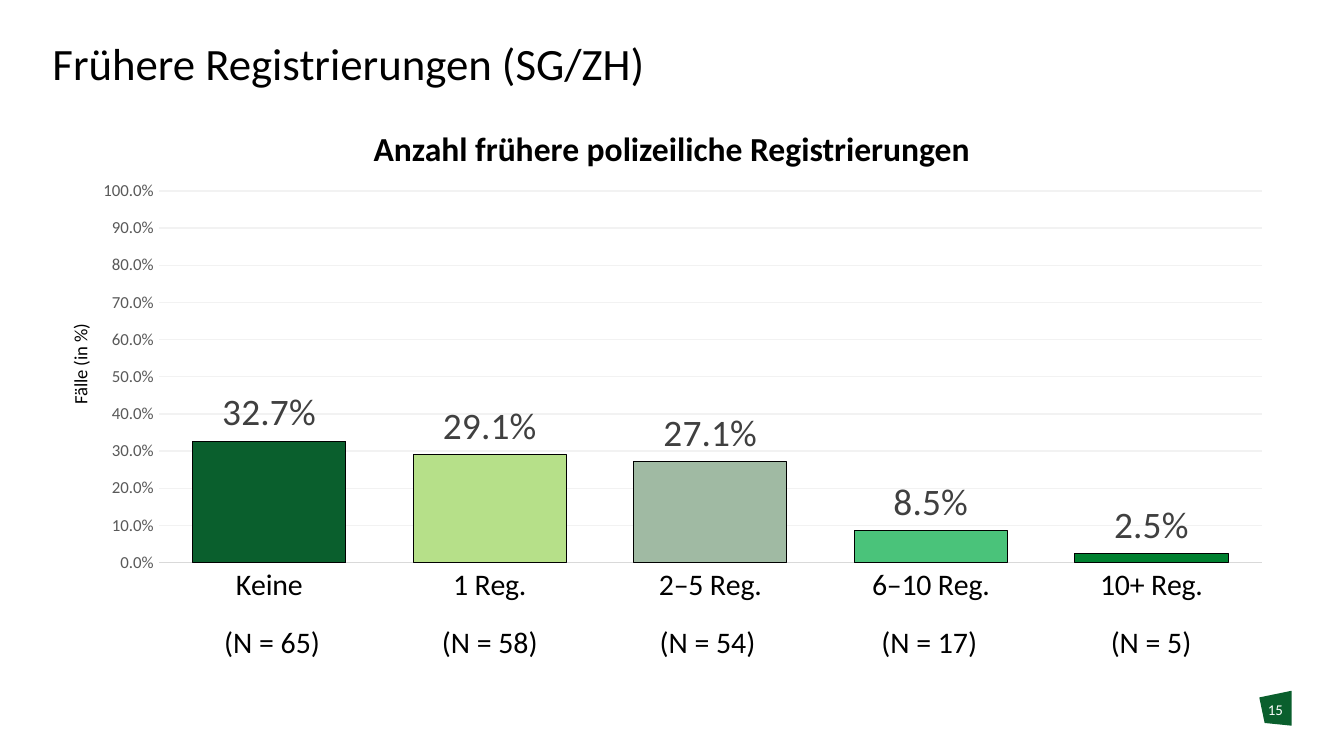
from pptx import Presentation, util as u
from pptx.chart.data import CategoryChartData
from pptx.dml.color import RGBColor
from pptx.enum import chart as ch, shapes, text
from pptx.oxml import parse_xml
from pptx.oxml.ns import nsdecls, qn

PX = 9144  # 100 px to the inch
HUES = {
    "ink": "000000", "paper": "FFFFFF", "grid": "F2F2F2", "axis": "D9D9D9",
    "tick": "595959", "label": "404040", "pine": "0A5F2D", "lime": "B6E089",
    "sage": "A0BAA3", "mint": "4AC37A", "leaf": "00802F",
}
GROUPS = [  # name, share, bar colour, count, left of the count
    ("Keine", 0.327, "pine", 65, 126),
    ("1 Reg.", 0.291, "lime", 58, 288),
    ("2–5 Reg.", 0.271, "sage", 54, 450),
    ("6–10 Reg.", 0.085, "mint", 17, 615),
    ("10+ Reg.", 0.025, "leaf", 5, 780),
]


def rgb(hue):
    return RGBColor.from_string(HUES[hue])


def emu(*box):
    return [u.Emu(round(n * PX)) for n in box]


def style(font, size, hue="ink", bold=False):
    form = {"name": "Calibri", "size": u.Pt(size), "bold": bold}
    for key, val in form.items():
        setattr(font, key, val)
    font.color.rgb = rgb(hue)


def paint(form, hue):
    form.fill.solid()
    form.fill.fore_color.rgb = rgb(hue)


def rule(line, hue, width):
    line.color.rgb = rgb(hue)
    line.width = u.Pt(width)


def write(frame, words, size, hue="ink", bold=False, side="CENTER", anchor="TOP", inset=0):
    form = {"word_wrap": True, "vertical_anchor": text.MSO_ANCHOR[anchor]}
    for edge in ("left", "right", "top", "bottom"):
        form[f"margin_{edge}"] = u.Emu(inset * PX)
    for key, val in form.items():
        setattr(frame, key, val)
    par = frame.paragraphs[0]
    par.alignment = text.PP_ALIGN[side]
    run = par.add_run()
    run.text = words
    style(run.font, size, hue, bold)
    return par


def place(node, index, inner=False, **spots):
    """Give a chart part a manual layout, in shares of the chart's size."""
    for old in node.findall(qn("c:layout")):
        node.remove(old)
    target = '<c:layoutTarget val="inner"/>' if inner else ""
    modes = "".join(f'<c:{k}Mode val="edge"/>' for k in "xy")
    sizes = "".join(f'<c:{k} val="{v}"/>' for k, v in spots.items())
    node.insert(index, parse_xml(
        f'<c:layout {nsdecls("c")}><c:manualLayout>{target}{modes}{sizes}'
        "</c:manualLayout></c:layout>"))


def add_title(slide, x, y, w, h):
    frame = slide.shapes.add_textbox(*emu(x, y, w, h)).text_frame
    par = write(frame, "Frühere Registrierungen (SG/ZH)", 24, side="LEFT", anchor="BOTTOM")
    par.line_spacing = 0.9


def add_badge(slide, x, y, w, h):
    """Page number on a slanted tile."""
    pen = slide.shapes.build_freeform(x, y + 5, scale=PX)
    pen.add_line_segments([(x + w, y), (x + w, y + h), (x + 4, y + h - 2)])
    tile = pen.convert_to_shape()
    tile.shadow.inherit = False
    paint(tile, "pine")
    tile.line.fill.background()
    frame = slide.shapes.add_textbox(*emu(x, y + 7, w, 30)).text_frame
    write(frame, "15", 8, "paper")


def add_head(slide, x, y, w, h):
    bar = slide.shapes.add_shape(shapes.MSO_SHAPE.RECTANGLE, *emu(x, y, w, h))
    bar.shadow.inherit = False
    paint(bar, "paper")
    bar.line.fill.background()
    write(bar.text_frame, "Anzahl frühere polizeiliche Registrierungen", 18,
          bold=True, anchor="MIDDLE")


def set_axes(chart):
    cat, val = chart.category_axis, chart.value_axis
    for axis in (cat, val):
        axis.major_tick_mark = axis.minor_tick_mark = ch.XL_TICK_MARK.NONE
    style(cat.tick_labels.font, 16)
    rule(cat.format.line, "axis", 0.75)
    style(val.tick_labels.font, 9, "tick")
    val.format.line.fill.background()
    rule(val.major_gridlines.format.line, "grid", 0.75)
    val.minimum_scale, val.maximum_scale, val.major_unit = 0, 1, 0.1
    val.tick_labels.number_format = "0.0%"
    val.tick_labels.number_format_is_linked = False
    frame = val.axis_title.text_frame
    run = frame.paragraphs[0].add_run()
    run.text = "Fälle (in %)"
    style(run.font, 10)
    body = frame._txBody.find(qn("a:bodyPr"))
    body.set("rot", "-5400000")
    body.set("vert", "horz")
    place(val.axis_title._element, 1, x=0.01, y=0.31)


def add_bars(slide, x, y, w, h):
    data = CategoryChartData(number_format="0.0%")
    data.categories = [group[0] for group in GROUPS]
    data.add_series("Series 1", [group[1] for group in GROUPS])
    chart = slide.shapes.add_chart(
        ch.XL_CHART_TYPE.COLUMN_CLUSTERED, *emu(x, y, w, h), data).chart
    chart.has_legend = chart.has_title = False
    style(chart.font, 10)
    set_axes(chart)
    plot = chart.plots[0]
    plot.gap_width, plot.vary_by_categories = 44, False
    bars = plot.series[0]
    bars.invert_if_negative = False
    paint(bars.format, "pine")
    rule(bars.format.line, "ink", 0.5)
    for i, group in enumerate(GROUPS):
        point = bars.points[i].format
        paint(point, group[2])
        rule(point.line, "ink", 0.5)
    tags = bars.data_labels
    form = {"show_value": True, "number_format": "0.0%",
            "number_format_is_linked": False,
            "position": ch.XL_LABEL_POSITION.OUTSIDE_END}
    for key, val in form.items():
        setattr(tags, key, val)
    style(tags.font, 20, "label")
    area = chart._chartSpace.chart.plotArea
    place(area, 0, inner=True, x=0.086, y=0.062, w=0.89, h=0.709)


def add_counts(slide, y, w, h):
    for *_, count, left in GROUPS:
        frame = slide.shapes.add_textbox(*emu(left, y, w, h)).text_frame
        write(frame, f"(N = {count})", 16, inset=5)


def main():
    deck = Presentation()
    deck.slide_width, deck.slide_height = emu(1000, 562.5)
    slide = deck.slides.add_slide(deck.slide_layouts[6])
    add_badge(slide, 937, 514, 24, 26)
    add_title(slide, 39, 0, 922, 67)
    add_bars(slide, 39, 118, 922, 390)
    add_head(slide, 39, 99, 922, 22)
    add_counts(slide, 459, 153, 37)
    deck.save("out.pptx")


if __name__ == "__main__":
    main()
